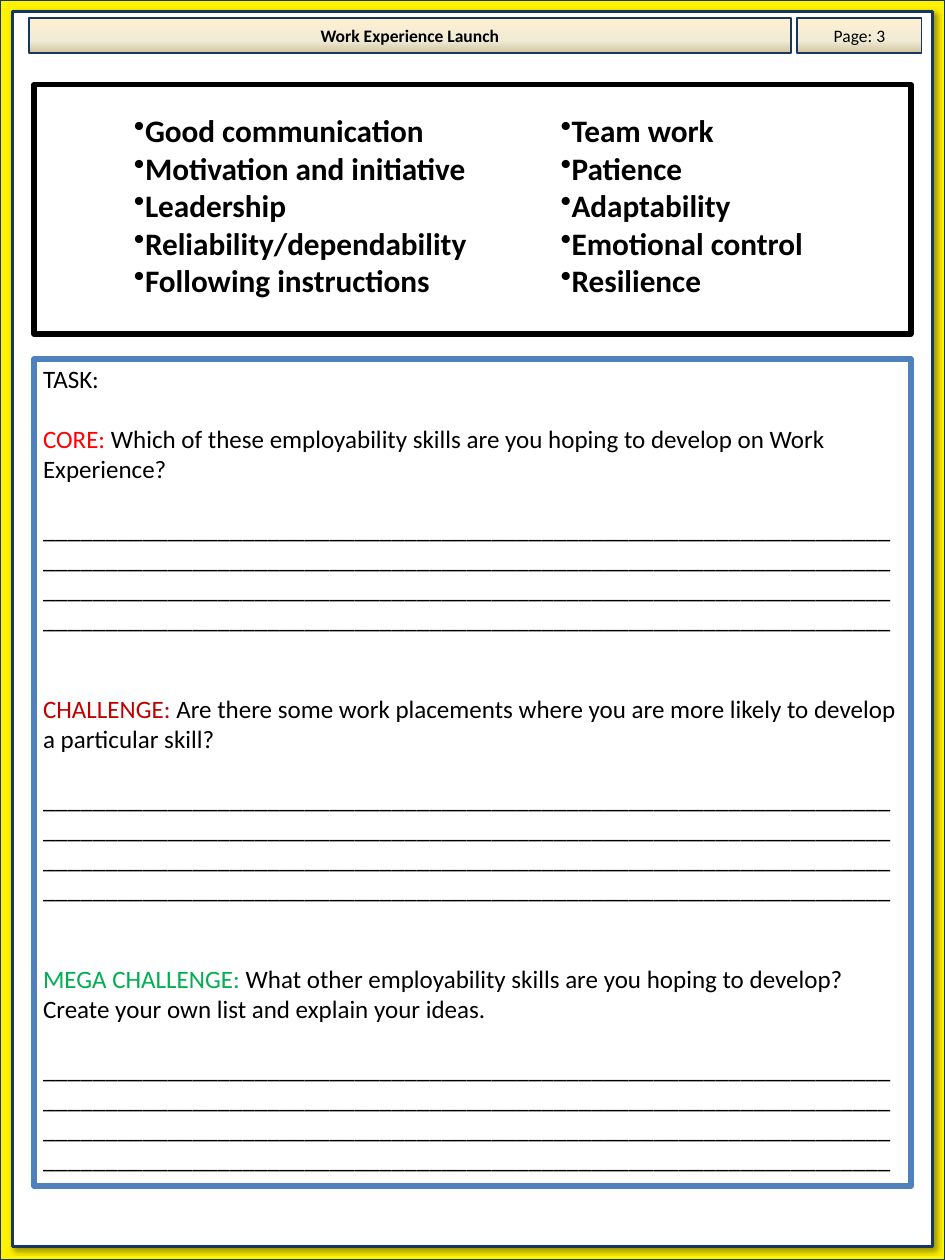
from copy import deepcopy

from pptx import Presentation
from pptx.dml.color import RGBColor
from pptx.enum.shapes import MSO_SHAPE as Shape
from pptx.enum.text import MSO_ANCHOR as Anchor, PP_ALIGN as Align
from pptx.oxml.ns import qn
from pptx.util import Inches, Pt
from lxml.etree import SubElement

COLORS = {
    "yellow": "FFF200", "white": "FFFFFF", "navy": "17375E", "blue": "4F81BD",
    "black": "000000", "red": "FF0000", "dark red": "C00000", "green": "00B050",
}
GRADIENT = [(0, "FFEFD1"), (0.65, "F0EBD5"), (1, "D1C39F")]
FONT = "Calibri"

# Content
HEADERS = [
    ("Work Experience Launch", True, (0.32, 0.2, 8.47, 0.39)),
    ("Page: 3", False, (8.86, 0.2, 1.38, 0.39)),
]
SKILLS = [
    ((1.39, 1.19, 4.05, 2.2),
     ["Good communication", "Motivation and initiative", "Leadership",
      "Reliability/dependability", "Following instructions"]),
    ((6.13, 1.19, 3, 2.2),
     ["Team work", "Patience", "Adaptability", "Emotional control", "Resilience"]),
]
TASKS = [
    ("CORE:", "red",
     " Which of these employability skills are you hoping to develop on Work Experience?"),
    ("CHALLENGE:", "dark red",
     " Are there some work placements where you are more likely to develop a\u00a0particular skill?"),
    ("MEGA CHALLENGE:", "green",
     " What other employability skills are you hoping to develop? "
     "Create your own list and explain your ideas."),
]
ANSWER_LINES = "_" * (68 * 4)
LINE_GAP = 24


def rgb(name):
    return RGBColor.from_string(COLORS[name])


def add_box(slide, place, line, width, fill=None):
    box = slide.shapes.add_shape(Shape.RECTANGLE, *map(Inches, place))
    box.shadow.inherit = False
    box.line.color.rgb = rgb(line)
    box.line.width = Pt(width)
    if fill:
        box.fill.solid()
        box.fill.fore_color.rgb = rgb(fill)
    else:
        box.fill.background()
    return box


def add_run(paragraph, text, size, color="black", bold=False):
    run = paragraph.add_run()
    run.text = text
    formats = {"name": FONT, "size": Pt(size), "bold": bold}
    for attribute, value in formats.items():
        setattr(run.font, attribute, value)
    run.font.color.rgb = rgb(color)


def next_paragraph(frame, first, align=Align.LEFT, gap=0):
    paragraph = frame.paragraphs[0] if first else frame.add_paragraph()
    paragraph.alignment = align
    paragraph.space_before = Pt(gap)
    return paragraph


def add_shadow(box):
    effects = box._element.spPr.find(qn("a:effectLst"))
    shadow = SubElement(effects, qn("a:outerShdw"), blurRad=str(Pt(4)),
                        dist=str(Pt(3)), dir="2700000", algn="tl", rotWithShape="0")
    color = SubElement(shadow, qn("a:srgbClr"), val=COLORS["black"])
    SubElement(color, qn("a:alpha"), val="40000")


def fill_gradient(box):
    box.fill.gradient()
    box.fill.gradient_angle = 270
    stop_list = box._element.spPr.find(qn("a:gradFill")).find(qn("a:gsLst"))
    stop_list.append(deepcopy(stop_list[-1]))
    for stop, (position, color) in zip(box.fill.gradient_stops, GRADIENT):
        stop.position = position
        stop.color.rgb = RGBColor.from_string(color)


def main():
    deck = Presentation()
    deck.slide_width, deck.slide_height = Inches(10.5), Inches(14)
    slide = deck.slides.add_slide(deck.slide_layouts[6])

    # Page border
    add_box(slide, (0, -0.01, 10.5, 14.01), "navy", 2.25, "yellow")
    add_shadow(add_box(slide, (0.14, 0.13, 10.22, 13.72), "navy", 2.25, "white"))

    # Tasks with answer lines
    task_frame = add_box(slide, (0.38, 3.99, 9.74, 9.19), "blue", 4.5).text_frame
    task_frame.word_wrap = True
    task_frame.vertical_anchor = Anchor.TOP
    add_run(next_paragraph(task_frame, True), "TASK:", 20)
    for index, (level, color, question) in enumerate(TASKS):
        gap = LINE_GAP * 2 if index else LINE_GAP
        prompt = next_paragraph(task_frame, False, gap=gap)
        add_run(prompt, level, 20, color)
        add_run(prompt, question, 20)
        answer = next_paragraph(task_frame, False, gap=LINE_GAP)
        add_run(answer, ANSWER_LINES, 20)

    # Skill lists
    for place, skills in SKILLS:
        skill_frame = slide.shapes.add_textbox(*map(Inches, place)).text_frame
        skill_frame.word_wrap = True
        for index, skill in enumerate(skills):
            paragraph = next_paragraph(skill_frame, index == 0)
            SubElement(paragraph._p.get_or_add_pPr(), qn("a:buChar"), char="•")
            add_run(paragraph, skill, 25, bold=True)

    # Header bar
    for title, bold, place in HEADERS:
        header = add_box(slide, place, "navy", 1.5)
        fill_gradient(header)
        header.text_frame.word_wrap = True
        header.text_frame.vertical_anchor = Anchor.MIDDLE
        add_run(next_paragraph(header.text_frame, True, Align.CENTER), title, 14, bold=bold)

    # Frame round the skills
    add_box(slide, (0.38, 0.94, 9.74, 2.77), "black", 4.5)

    deck.save("out.pptx")


if __name__ == "__main__":
    main()
